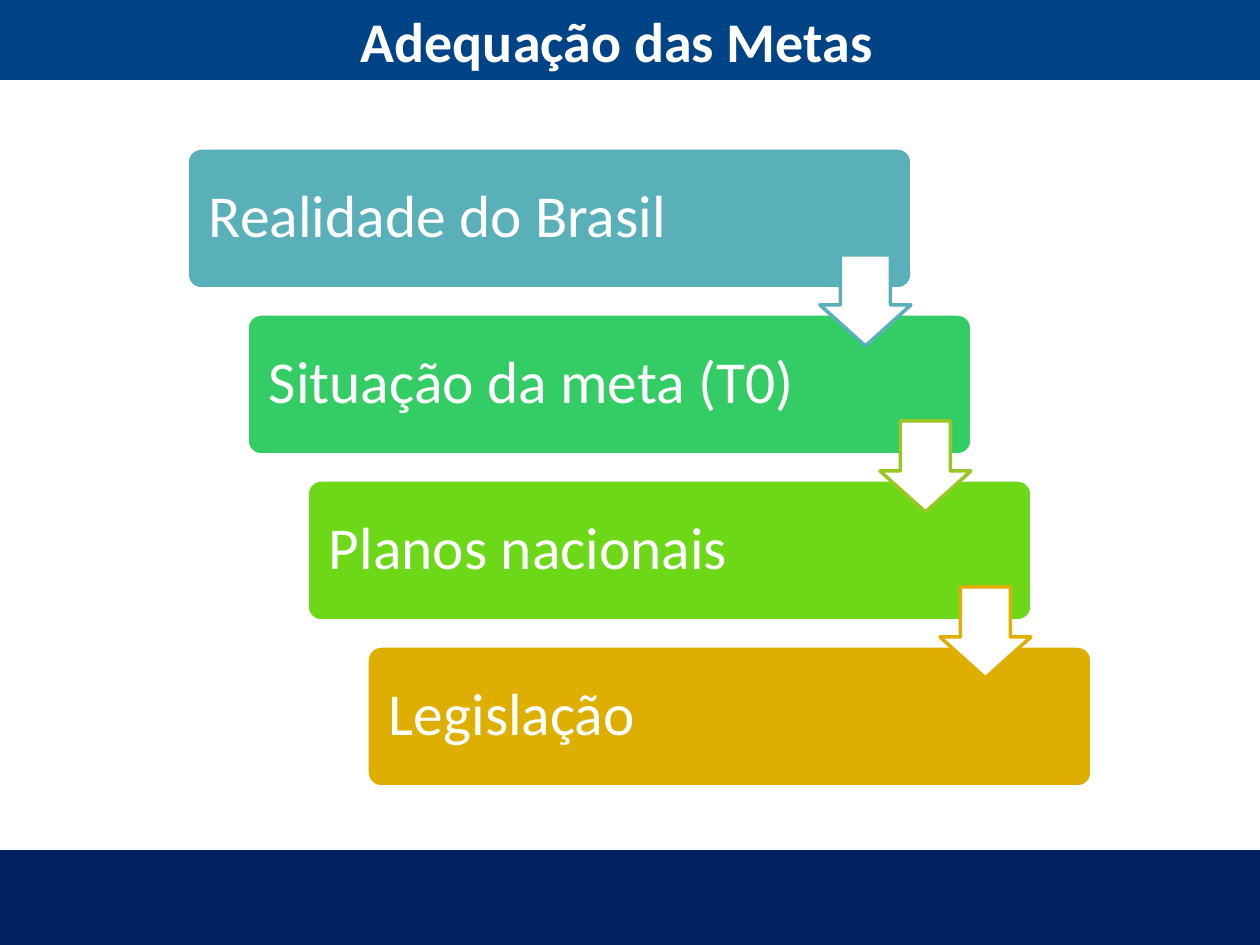
from pptx import Presentation
from pptx import util as u
from pptx.dml.color import RGBColor
from pptx.enum import shapes, text

FONT = "Calibri"
WHITE = "FFFFFF"
STEPS = [
    ("Realidade do Brasil", "59B0B9"),
    ("Situação da meta (T0)", "34CD65"),
    ("Planos nacionais", "6DD818"),
    ("Legislação", "DEAE00"),
]
ARROW_LINES = ["59B0B9", "98C723", "DEAE00"]
STEP_RIGHT, STEP_DOWN = 60, 166


def px(length):
    return u.Emu(round(length * 914400 / 126))


def color(value):
    return RGBColor.from_string(value)


def add_box(slide, kind, box, fill, line=None, adjustments=()):
    shape = slide.shapes.add_shape(kind, *map(px, box))
    shape.shadow.inherit = False
    shape.fill.solid()
    shape.fill.fore_color.rgb = color(fill)
    if line:
        shape.line.color.rgb = color(line)
        shape.line.width = u.Pt(2)
    else:
        shape.line.fill.background()
    for index, value in enumerate(adjustments):
        shape.adjustments[index] = value
    return shape


def write(shape, content, size, bold=False, align=text.PP_ALIGN.LEFT,
          insets=(18, 18, 18, 18), spacing=1.0):
    frame = shape.text_frame
    frame.word_wrap = True
    frame.vertical_anchor = text.MSO_ANCHOR.MIDDLE
    (frame.margin_left, frame.margin_top,
     frame.margin_right, frame.margin_bottom) = map(px, insets)
    paragraph = frame.paragraphs[0]
    paragraph.alignment = align
    paragraph.line_spacing = spacing
    run = paragraph.add_run()
    run.text = content
    run.font.name = FONT
    run.font.size = u.Pt(size)
    run.font.bold = bold
    run.font.color.rgb = color(WHITE)


def add_bands(slide):
    rectangle = shapes.MSO_SHAPE.RECTANGLE
    add_box(slide, rectangle, (0, 850, 1260, 95), "002060")
    header = add_box(slide, rectangle, (0, 0, 1260, 80), "004386")
    write(header, "Adequação das Metas", 32, bold=True,
          align=text.PP_ALIGN.CENTER, insets=(13, 6, 39, 6))


def add_step(slide, index, label, fill):
    left, top = 187 + index * STEP_RIGHT, 148 + index * STEP_DOWN
    add_box(slide, shapes.MSO_SHAPE.ROUNDED_RECTANGLE,
            (left, top, 725, 141), fill, WHITE, [0.1])
    label_box = slide.shapes.add_textbox(*map(px, (left + 4, top + 4, 565, 132)))
    write(label_box, label, 34, spacing=0.9)


def add_arrow(slide, index, line):
    left, top = 820 + index * STEP_RIGHT, 255 + index * STEP_DOWN
    add_box(slide, shapes.MSO_SHAPE.DOWN_ARROW,
            (left, top, 91, 91), WHITE, line, [0.55, 0.45])


def main():
    presentation = Presentation()
    presentation.slide_width = px(1260)
    presentation.slide_height = px(945)
    slide = presentation.slides.add_slide(presentation.slide_layouts[6])
    add_bands(slide)
    for index, (label, fill) in enumerate(STEPS):
        add_step(slide, index, label, fill)
    for index, line in enumerate(ARROW_LINES):
        add_arrow(slide, index, line)
    presentation.save("out.pptx")


if __name__ == "__main__":
    main()
